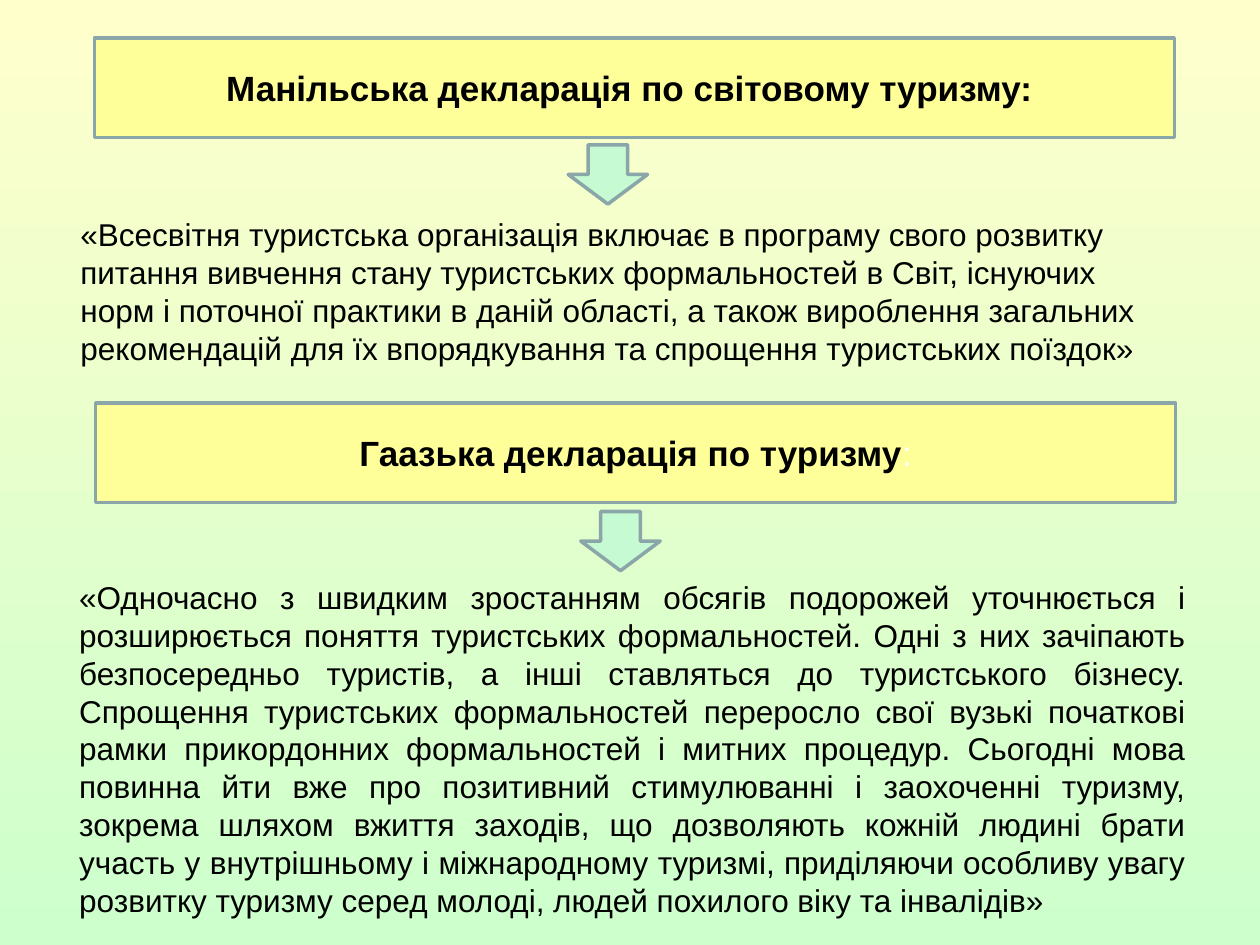
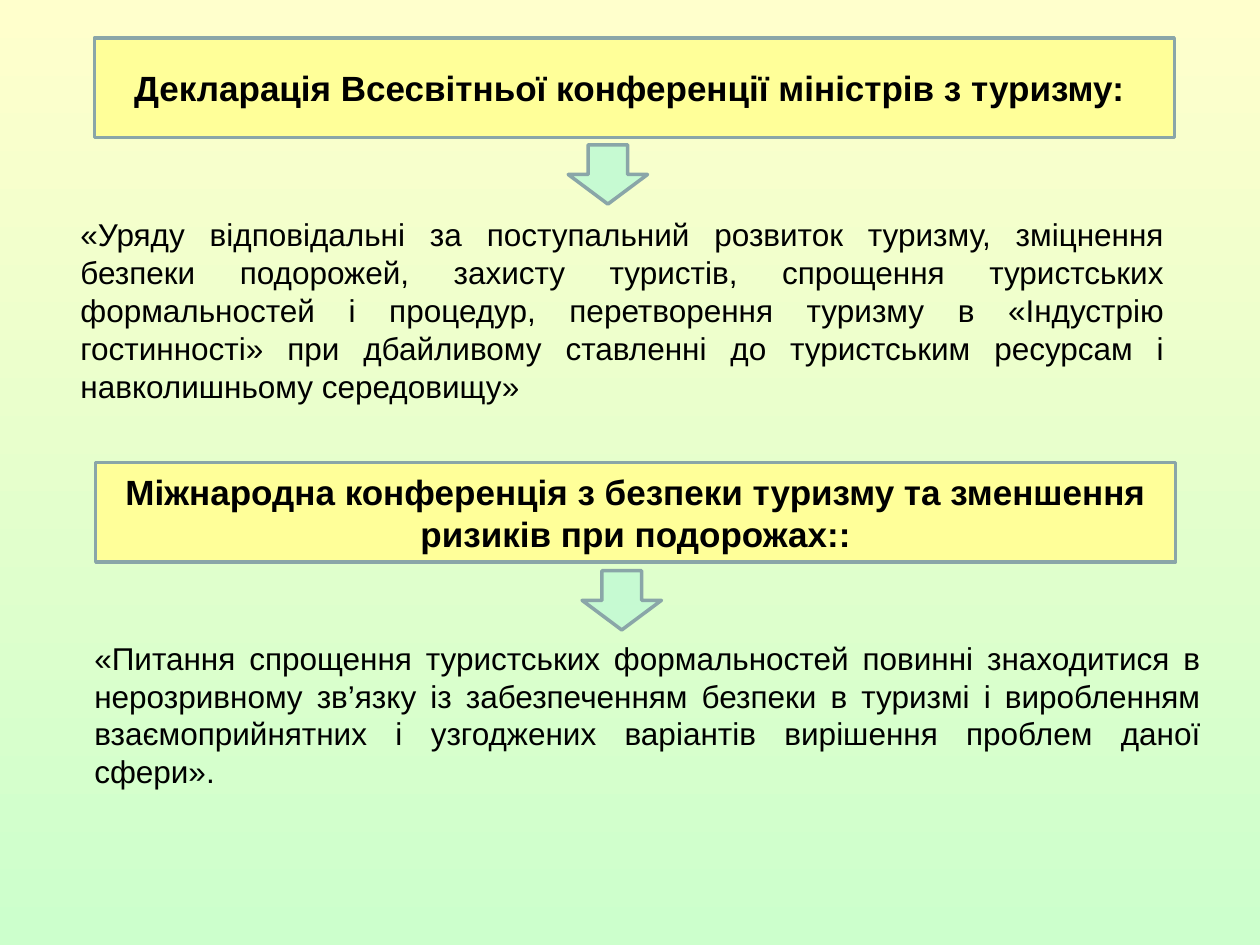
from pptx import Presentation
from pptx.dml.color import RGBColor
from pptx.enum.shapes import MSO_SHAPE
from pptx.enum.text import MSO_ANCHOR, MSO_AUTO_SIZE, PP_ALIGN
from pptx.util import Inches, Pt

RECTANGLE = MSO_SHAPE.RECTANGLE
DOWN_ARROW = MSO_SHAPE.DOWN_ARROW
MIDDLE = MSO_ANCHOR.MIDDLE
TOP = MSO_ANCHOR.TOP
NO_FIT = MSO_AUTO_SIZE.NONE
GROW = MSO_AUTO_SIZE.SHAPE_TO_FIT_TEXT
LEFT, CENTER, JUSTIFY = PP_ALIGN.LEFT, PP_ALIGN.CENTER, PP_ALIGN.JUSTIFY

TITLE_ONLY = 5
PAGE_TOP, PAGE_BOTTOM = "FFFFCC", "CCFFCC"
BAND, ARROW, OUTLINE = "FFFF99", "C6FAD2", "8AA6A8"
BLACK, WHITE = "000000", "FFFFFF"

HEADING_FONT = {"name": "Arial", "size": Pt(20), "bold": True}
QUOTE_FONT = {"name": "Arial", "size": Pt(18), "bold": False}
HEADING_FRAME = {"word_wrap": True, "auto_size": NO_FIT, "vertical_anchor": MIDDLE}
QUOTE_FRAME = {"word_wrap": True, "auto_size": GROW, "vertical_anchor": TOP}

HEADING_SIZE = (8.57, 0.79)
ARROW_SIZE = (0.63, 0.47)
TITLE_AT = (0.75, 0.3)
TITLE_ARROW_AT = (4.51, 1.15)
ARROW_DROP = 0.86

MANILA = (
    "«Всесвітня туристська організація включає в програму свого розвитку "
    "питання вивчення стану туристських формальностей в Світ, існуючих норм "
    "і поточної практики в даній області, а також вироблення загальних "
    "рекомендацій для їх впорядкування та спрощення туристських поїздок»"
)
HAGUE = (
    "«Одночасно з швидким зростанням обсягів подорожей уточнюється і "
    "розширюється поняття туристських формальностей. Одні з них зачіпають "
    "безпосередньо туристів, а інші ставляться до туристського бізнесу. "
    "Спрощення туристських формальностей переросло свої вузькі початкові "
    "рамки прикордонних формальностей і митних процедур. Сьогодні мова "
    "повинна йти вже про позитивний стимулюванні і заохоченні туризму, "
    "зокрема шляхом вжиття заходів, що дозволяють кожній людині брати участь "
    "у внутрішньому і міжнародному туризмі, приділяючи особливу увагу "
    "розвитку туризму серед молоді, людей похилого віку та інвалідів»"
)
MINISTERS = (
    "«Уряду відповідальні за поступальний розвиток туризму, зміцнення безпеки "
    "подорожей, захисту туристів, спрощення туристських формальностей і "
    "процедур, перетворення туризму в «Індустрію гостинності» при дбайливому "
    "ставленні до туристським ресурсам і навколишньому середовищу»"
)
SAFETY = (
    "«Питання спрощення туристських формальностей повинні знаходитися в "
    "нерозривному зв’язку із забезпеченням безпеки в туризмі і виробленням "
    "взаємоприйнятних і узгоджених варіантів вирішення проблем даної сфери»."
)


def color(value):
    return RGBColor.from_string(value)


def apply(target, values):
    for name, value in values.items():
        setattr(target, name, value)


def place(shape, position, size):
    names = ("left", "top", "width", "height")
    apply(shape, dict(zip(names, map(Inches, position + size))))


def paint(shape, fill):
    shape.fill.solid()
    shape.fill.fore_color.rgb = color(fill)
    shape.line.color.rgb = color(OUTLINE)
    shape.line.width = Pt(2)


def add_span(para, text, font, ink=BLACK):
    span = para.add_run()
    span.text = text
    apply(span.font, font)
    span.font.color.rgb = color(ink)


def write(shape, text, font, frame, alignment):
    apply(shape.text_frame, frame)
    para = shape.text_frame.paragraphs[0]
    para.alignment = alignment
    add_span(para, text, font)
    return para


def add_shape(page, kind, position, size, fill):
    shape = page.shapes.add_shape(kind, *map(Inches, position + size))
    shape.shadow.inherit = False
    paint(shape, fill)
    return shape


def add_title(page, text):
    title = page.shapes.title
    place(title, TITLE_AT, HEADING_SIZE)
    paint(title, BAND)
    write(title, text, HEADING_FONT, HEADING_FRAME, CENTER)


def add_heading(page, text, position):
    heading = add_shape(page, RECTANGLE, position, HEADING_SIZE, BAND)
    return write(heading, text, HEADING_FONT, HEADING_FRAME, CENTER)


def add_arrow(page, position):
    add_shape(page, DOWN_ARROW, position, ARROW_SIZE, ARROW)


def add_quote(page, text, position, size, alignment=JUSTIFY):
    box = page.shapes.add_textbox(*map(Inches, position + size))
    write(box, text, QUOTE_FONT, QUOTE_FRAME, alignment)


def add_page(deck, title):
    page = deck.slides.add_slide(deck.slide_layouts[TITLE_ONLY])
    fill = page.background.fill
    fill.gradient()
    fill.gradient_angle = 270
    for stop, value in zip(fill.gradient_stops, (PAGE_TOP, PAGE_BOTTOM)):
        stop.color.rgb = color(value)
    add_title(page, title)
    add_arrow(page, TITLE_ARROW_AT)
    return page


def add_second_heading(page, text, top, arrow_left):
    para = add_heading(page, text, (0.76, top))
    add_arrow(page, (arrow_left, top + ARROW_DROP))
    return para


def main():
    deck = Presentation()
    deck.slide_width, deck.slide_height = Inches(10), Inches(7.5)

    page = add_page(deck, "Манільська декларація по світовому туризму: ")
    add_quote(page, MANILA, (0.54, 1.66), (8.8, 1.31), LEFT)
    para = add_second_heading(page, "Гаазька декларація по туризму", 3.2, 4.61)
    add_span(para, ":", {**HEADING_FONT, "bold": False}, WHITE)
    add_quote(page, HAGUE, (0.53, 4.54), (8.98, 2.83))

    page = add_page(deck, "Декларація Всесвітньої конференції міністрів з туризму: ")
    add_quote(page, MINISTERS, (0.54, 1.66), (8.8, 1.62))
    add_second_heading(
        page,
        "Міжнародна конференція з безпеки туризму та зменшення ризиків при подорожах::",
        3.67,
        4.62,
    )
    add_quote(page, SAFETY, (0.65, 5.02), (8.98, 1.31))

    deck.save("out.pptx")


if __name__ == "__main__":
    main()
